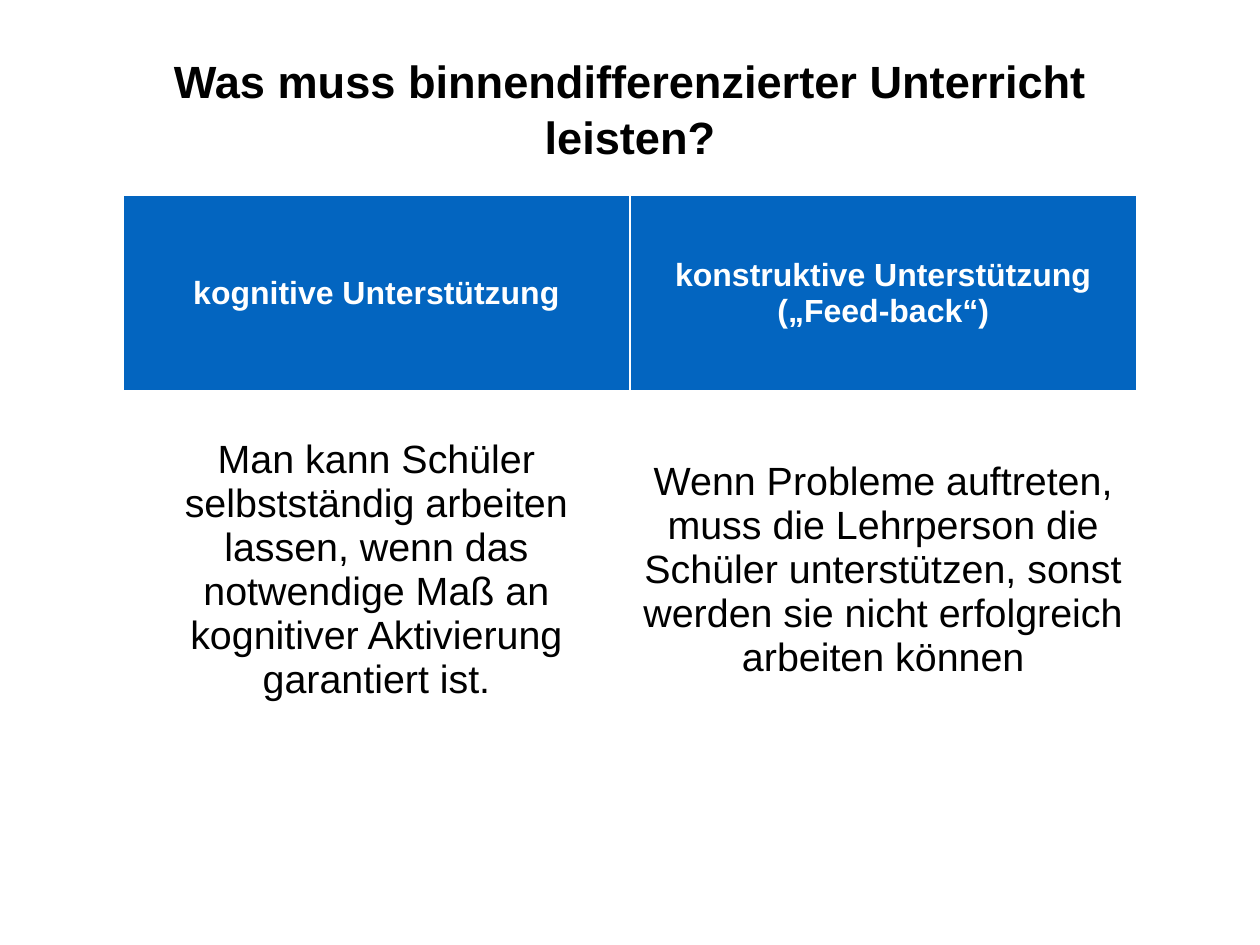
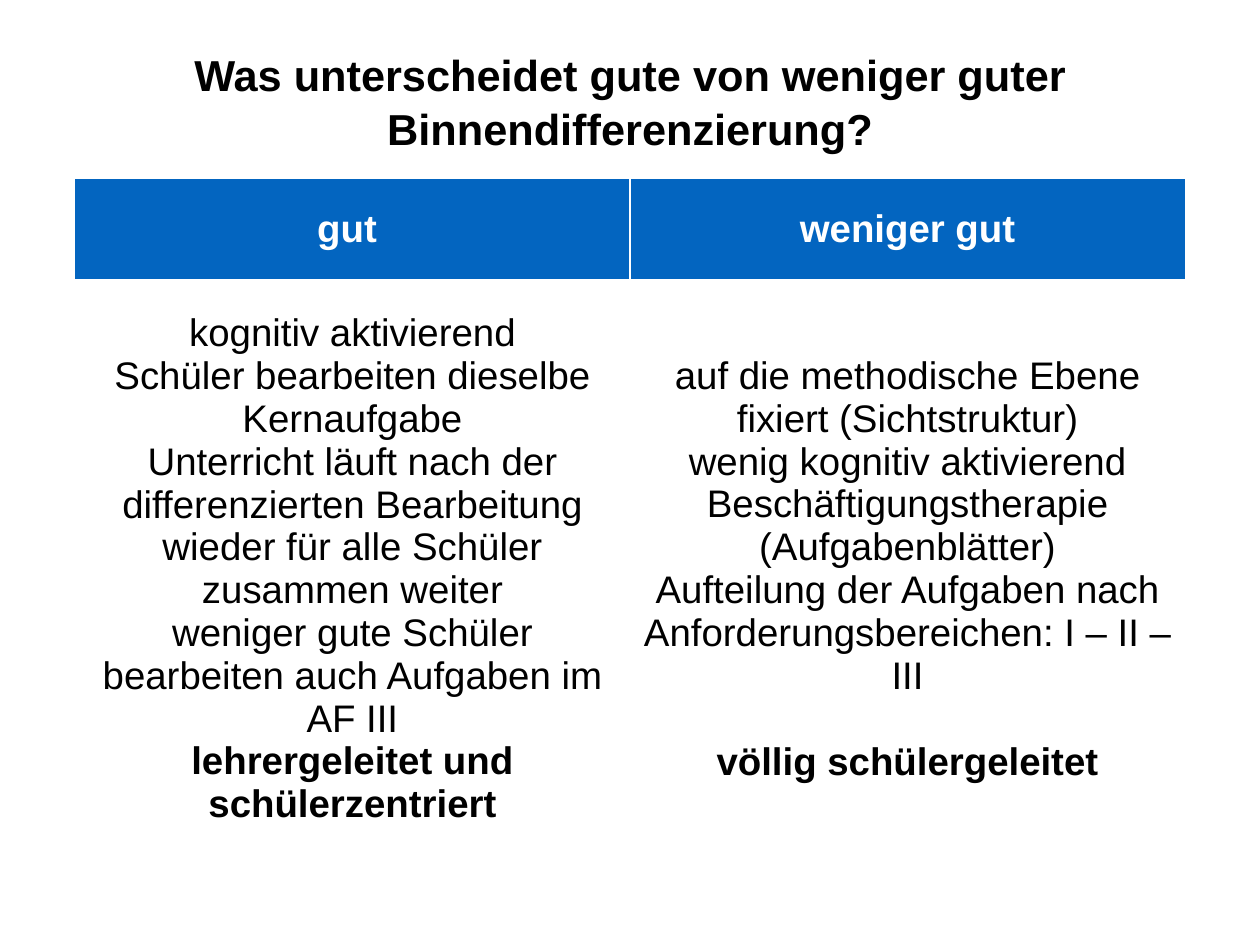
from pptx import Presentation
from pptx.dml.color import RGBColor
from pptx.enum.text import MSO_ANCHOR, PP_ALIGN
from pptx.util import Inches, Pt

BLUE, WHITE, BLACK = "0365C0", "FFFFFF", "000000"


def rgb(value):
    return RGBColor.from_string(value)


def add_text(p, text, size, color=BLACK, bold=False, before=0):
    p.alignment = PP_ALIGN.CENTER
    p.space_before = Pt(before)
    r = p.add_run()
    r.text = text
    r.font.name = "Arial"
    r.font.size = Pt(size)
    r.font.bold = bold
    r.font.color.rgb = rgb(color)


class Deck:
    """Shared style and the current slide."""
    inset = Inches(0.06)
    width = 14.22

    def __init__(self):
        self.prs = Presentation()
        self.prs.slide_width = Inches(self.width)
        self.prs.slide_height = Inches(10.67)

    def slide(self):
        self.s = self.prs.slides.add_slide(self.prs.slide_layouts[6])
        self.s.background.fill.solid()
        self.s.background.fill.fore_color.rgb = rgb(WHITE)

    def set_insets(self, box):
        box.margin_left = box.margin_right = self.inset
        box.margin_top = box.margin_bottom = self.inset
        box.vertical_anchor = MSO_ANCHOR.MIDDLE

    def title(self, text, height, size):
        sp = self.s.shapes.add_textbox(
            Inches(1.04), Inches(0.49), Inches(12.14), Inches(height))
        tf = sp.text_frame
        tf.word_wrap = True
        self.set_insets(tf)
        add_text(tf.paragraphs[0], text, size, bold=True)
        tf.paragraphs[0].line_spacing = 1.04

    def cell(self, cell, lines, fill, **style):
        """Each line is a text or a (text, format) pair."""
        self.set_insets(cell)
        cell.fill.solid()
        cell.fill.fore_color.rgb = rgb(fill)
        tf = cell.text_frame
        for i, line in enumerate(lines):
            text, extra = (line, {}) if isinstance(line, str) else line
            p = tf.add_paragraph() if i else tf.paragraphs[0]
            add_text(p, text, **{**style, **extra})

    def comparison(self, top, width, heights, heads, bodies, head_size, body_size):
        """Two equal columns, centred on the slide, under a blue header row."""
        table = self.s.shapes.add_table(
            2, 2, Inches((self.width - width) / 2), Inches(top),
            Inches(width), Inches(sum(heights))).table
        for row, height in zip(table.rows, heights):
            row.height = Inches(height)
        for i, (head, body) in enumerate(zip(heads, bodies)):
            table.columns[i].width = Inches(width / 2)
            self.cell(table.cell(0, i), [head], BLUE,
                      size=head_size, color=WHITE, bold=True)
            self.cell(table.cell(1, i), body, WHITE, size=body_size)


def main():
    deck = Deck()

    # What differentiated teaching must achieve
    deck.slide()
    deck.title("Was muss binnendifferenzierter Unterricht leisten?", 1.45, 36.7)
    deck.comparison(
        2.21, 11.44, (2.2, 4.05),
        ("kognitive Unterstützung", "konstruktive Unterstützung („Feed-back“)"),
        (["Man kann Schüler selbstständig arbeiten lassen, wenn das notwendige "
          "Maß an kognitiver Aktivierung garantiert ist."],
         ["Wenn Probleme auftreten, muss die Lehrperson die Schüler unterstützen, "
          "sonst werden sie nicht erfolgreich arbeiten können"]),
        head_size=26, body_size=32)

    # Good and less good differentiation
    deck.slide()
    deck.title("Was unterscheidet gute von weniger guter Binnendifferenzierung?",
               1.29, 35.2)
    deck.comparison(
        2.01, 12.53, (1.15, 6.53),
        ("gut ", "weniger gut"),
        (["kognitiv aktivierend",
          "Schüler bearbeiten dieselbe Kernaufgabe",
          "Unterricht läuft nach der differenzierten Bearbeitung wieder für alle "
          "Schüler zusammen weiter",
          "weniger gute Schüler bearbeiten auch Aufgaben im AF III",
          ("lehrergeleitet und schülerzentriert", {"bold": True})],
         ["auf die methodische Ebene fixiert (Sichtstruktur)",
          "wenig kognitiv aktivierend",
          "Beschäftigungstherapie (Aufgabenblätter)",
          "Aufteilung der Aufgaben nach Anforderungsbereichen: I – II – III",
          ("völlig schülergeleitet", {"bold": True, "before": 35})]),
        head_size=31.2, body_size=31.2)

    deck.prs.save("out.pptx")


if __name__ == "__main__":
    main()
